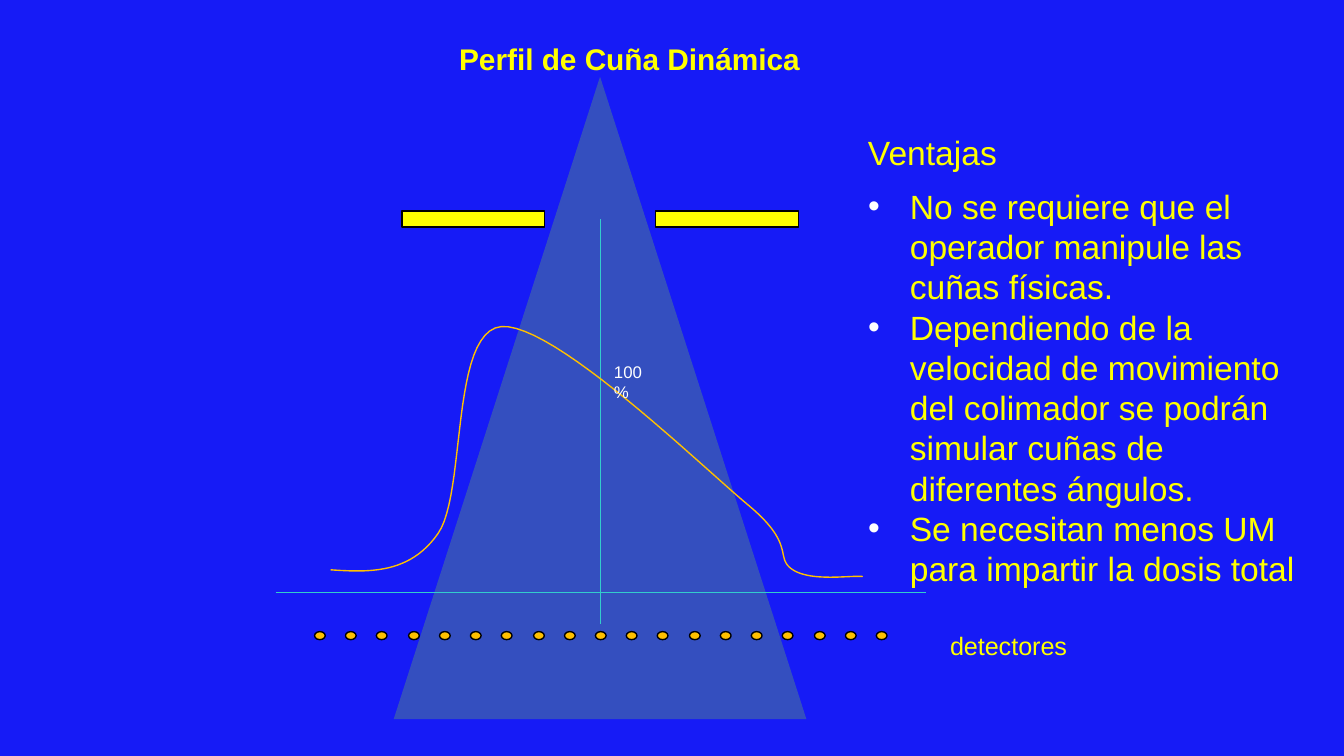
from dataclasses import dataclass

from lxml.etree import SubElement
from pptx import Presentation
from pptx.dml.color import RGBColor
from pptx.enum.shapes import MSO_CONNECTOR as Connector
from pptx.enum.shapes import MSO_SHAPE as Shape
from pptx.enum.text import MSO_ANCHOR as Anchor
from pptx.enum.text import MSO_AUTO_SIZE as AutoSize
from pptx.enum.text import PP_ALIGN as Align
from pptx.oxml.ns import qn
from pptx.util import Pt

EMU_PER_PX = 9144  # 100 px to the inch
SLIDE_WIDTH = 1000
LINE_WIDTH = Pt(0.75)
COLORS = {
    "background": "161BF6",
    "text": "FFFF00",
    "label": "FFFFFF",
    "beam": "7FD13B",
    "axis": "33CCCC",
    "collimator": "FFFF00",
    "detector": "FFC000",
    "profile": "FFC000",
    "outline": "000000",
}
ADVANTAGES = [
    "No se requiere que el operador manipule las cuñas físicas.",
    "Dependiendo de la velocidad de movimiento del colimador se podrán "
    "simular cuñas de diferentes ángulos.",
    "Se necesitan menos UM para impartir la dosis total",
]
DETECTOR_COUNT = 19
FIRST_DETECTOR, LAST_DETECTOR = 234, 652
PROFILE_START = (246, 424)
PROFILE_CURVES = [
    ((275, 426), (305, 427), (326, 397)),
    ((347, 367), (335, 247), (373, 243)),
    ((412, 240), (521, 346), (557, 376)),
    ((593, 406), (576, 415), (590, 424)),
    ((604, 433), (633, 428), (642, 429)),
]
CURVE_STEPS = 24


@dataclass(frozen=True)
class Box:
    left: int
    top: int
    width: int
    height: int

    def emu(self) -> tuple[int, ...]:
        return tuple(px(v) for v in (self.left, self.top, self.width, self.height))


@dataclass(frozen=True)
class TextStyle:
    size: float
    color: str = "text"
    bold: bool = False
    align: Align = Align.LEFT


@dataclass(frozen=True)
class Label:
    text: str
    box: Box
    style: TextStyle


LABELS = [
    Label("detectores", Box(697, 464, 142, 32), TextStyle(13.5)),
    Label("100 %", Box(447, 264, 53, 40), TextStyle(9, "label")),
    Label("Ventajas", Box(636, 93, 305, 40), TextStyle(18)),
]


def px(value: float) -> int:
    return round(value * EMU_PER_PX)


def rgb(name: str) -> RGBColor:
    return RGBColor.from_string(COLORS[name])


def write_text(shape, box: Box, text: str, style: TextStyle) -> None:
    shape.left, shape.top, shape.width, shape.height = box.emu()
    text_frame = shape.text_frame
    text_frame.text = text
    text_frame.word_wrap = True
    text_frame.auto_size = AutoSize.NONE
    text_frame.vertical_anchor = Anchor.TOP
    for paragraph in text_frame.paragraphs:
        paragraph.alignment = style.align
        paragraph.space_before = Pt(0)
        paragraph.line_spacing = Pt(style.size * 1.2)
        for run in paragraph.runs:
            run.font.name = "Arial"
            run.font.size = Pt(style.size)
            run.font.bold = style.bold
            run.font.color.rgb = rgb(style.color)


def add_bullet(paragraph, indent: int, color: str) -> None:
    properties = paragraph._p.get_or_add_pPr()
    properties.set("marL", str(px(indent)))
    properties.set("indent", str(-px(indent)))
    bullet_color = SubElement(properties, qn("a:buClr"))
    SubElement(bullet_color, qn("a:srgbClr"), val=COLORS[color])
    SubElement(properties, qn("a:buFont"), typeface="Arial")
    SubElement(properties, qn("a:buChar"), char="•")


def add_filled(slide, kind: Shape, box: Box, fill: str, outlined: bool = True):
    shape = slide.shapes.add_shape(kind, *box.emu())
    shape.shadow.inherit = False
    shape.fill.solid()
    shape.fill.fore_color.rgb = rgb(fill)
    if outlined:
        shape.line.color.rgb = rgb("outline")
        shape.line.width = LINE_WIDTH
    else:
        shape.line.fill.background()
    return shape


def add_beam(slide) -> None:
    beam = add_filled(slide, Shape.ISOSCELES_TRIANGLE, Box(293, 57, 307, 478), "beam", False)
    color = beam._element.spPr.find(qn("a:solidFill")).find(qn("a:srgbClr"))
    SubElement(color, qn("a:alpha"), val="29000")


def add_axis(slide, start: tuple[int, int], end: tuple[int, int]) -> None:
    points = [px(value) for value in (*start, *end)]
    axis = slide.shapes.add_connector(Connector.STRAIGHT, *points)
    axis.line.color.rgb = rgb("axis")
    axis.line.width = LINE_WIDTH
    SubElement(axis._element.spPr, qn("a:effectLst"))


def profile_points() -> list[tuple[int, int]]:
    """Sample the cubic curves of the dose profile, in EMU."""
    points = []
    start = PROFILE_START
    for first, second, end in PROFILE_CURVES:
        for step in range(1, CURVE_STEPS + 1):
            t = step / CURVE_STEPS
            weights = ((1 - t) ** 3, 3 * t * (1 - t) ** 2, 3 * t**2 * (1 - t), t**3)
            controls = (start, first, second, end)
            x, y = (sum(w * c[i] for w, c in zip(weights, controls)) for i in (0, 1))
            points.append((px(x), px(y)))
        start = end
    return points


def add_profile(slide) -> None:
    builder = slide.shapes.build_freeform(*(px(value) for value in PROFILE_START))
    builder.add_line_segments(profile_points(), close=False)
    profile = builder.convert_to_shape()
    profile.shadow.inherit = False
    profile.fill.background()
    profile.line.color.rgb = rgb("profile")
    profile.line.width = LINE_WIDTH


def main() -> None:
    presentation = Presentation()
    presentation.slide_width = px(SLIDE_WIDTH)
    presentation.slide_height = px(SLIDE_WIDTH * 9 / 16)
    slide = presentation.slides.add_slide(presentation.slide_layouts[1])
    slide.background.fill.solid()
    slide.background.fill.fore_color.rgb = rgb("background")

    title_style = TextStyle(16, bold=True, align=Align.CENTER)
    write_text(slide.shapes.title, Box(12, 25, 913, 36), "Perfil de Cuña Dinámica", title_style)
    body = slide.placeholders[1]
    write_text(body, Box(636, 133, 352, 313), "\n".join(ADVANTAGES), TextStyle(18))
    for paragraph in body.text_frame.paragraphs:
        add_bullet(paragraph, 31, "label")

    add_beam(slide)
    add_axis(slide, (447, 163), (447, 464))
    add_axis(slide, (205, 441), (689, 441))
    pitch = (LAST_DETECTOR - FIRST_DETECTOR) / (DETECTOR_COUNT - 1)
    for index in range(DETECTOR_COUNT):
        left = round(FIRST_DETECTOR + index * pitch)
        add_filled(slide, Shape.OVAL, Box(left, 470, 8, 6), "detector")
    for left in (299, 488):
        add_filled(slide, Shape.RECTANGLE, Box(left, 157, 106, 12), "collimator")
    add_profile(slide)
    for label in LABELS:
        text_box = slide.shapes.add_textbox(*label.box.emu())
        write_text(text_box, label.box, label.text, label.style)

    presentation.save("out.pptx")


if __name__ == "__main__":
    main()
